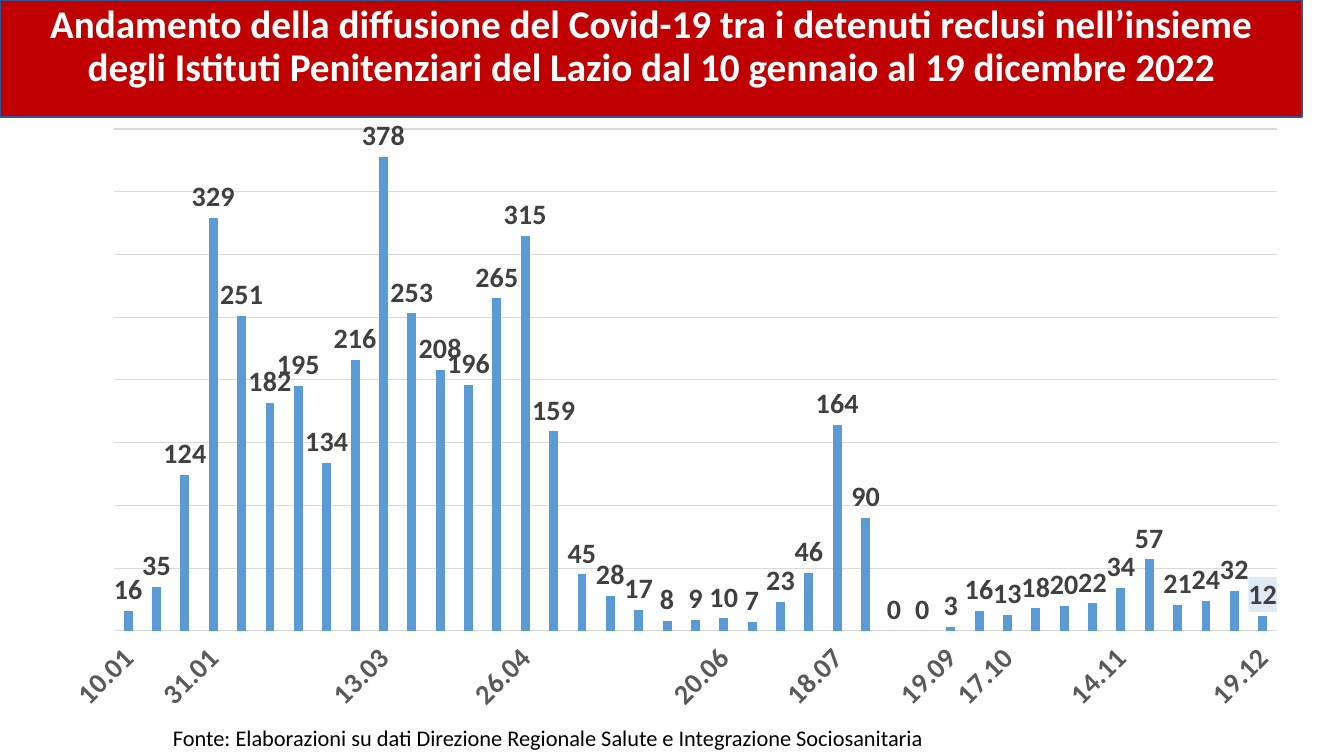
from lxml import etree
from pptx import Presentation
from pptx.chart.data import CategoryChartData
from pptx.dml.color import RGBColor
from pptx.enum.chart import XL_CHART_TYPE, XL_LABEL_POSITION, XL_TICK_LABEL_POSITION, XL_TICK_MARK
from pptx.enum.text import MSO_ANCHOR, MSO_AUTO_SIZE, PP_ALIGN
from pptx.oxml import parse_xml
from pptx.oxml.ns import nsdecls, qn
from pptx.util import Pt

COLUMN = XL_CHART_TYPE.COLUMN_CLUSTERED
OUTSIDE = XL_LABEL_POSITION.OUTSIDE_END
LOW = XL_TICK_LABEL_POSITION.LOW
NO_TICK = XL_TICK_MARK.NONE
TOP = MSO_ANCHOR.TOP
NO_FIT = MSO_AUTO_SIZE.NONE
GROW = MSO_AUTO_SIZE.SHAPE_TO_FIT_TEXT
CENTER = PP_ALIGN.CENTER

SCALE = 914400 / 100.8
COLORS = {
    "red": "C00000", "edge": "325491", "white": "FFFFFF", "black": "000000",
    "bar": "5B9BD5", "grid": "D9D9D9", "axis": "595959", "label": "404040",
    "tint": "DEEBF7",
}
DATES = {
    0: "10.01", 3: "31.01", 9: "13.03", 14: "26.04", 21: "20.06",
    25: "18.07", 29: "19.09", 31: "17.10", 35: "14.11", 40: "19.12",
}
CASES = [
    16, 35, 124, 329, 251, 182, 195, 134, 216, 378, 253, 208, 196, 265,
    315, 159, 45, 28, 17, 8, 9, 10, 7, 23, 46, 164, 90, 0, 0, 3, 16, 13,
    18, 20, 22, 34, 57, 21, 24, 32, 12,
]


def px(*nums):
    return [round(n * SCALE) for n in nums]


def style(font, size, color, bold):
    form = {"name": "Calibri", "size": Pt(size), "bold": bold}
    for key, value in form.items():
        setattr(font, key, value)
    font.color.rgb = RGBColor.from_string(COLORS[color])


deck = Presentation()
deck.slide_width, deck.slide_height = px(1344, 756)
slide = deck.slides.add_slide(deck.slide_layouts[5])

title = slide.shapes.title
title.left, title.top, title.width, title.height = px(0, 0, 1302, 117)
title.fill.solid()
title.fill.fore_color.rgb = RGBColor.from_string(COLORS["red"])
title.line.color.rgb = RGBColor.from_string(COLORS["edge"])
title.line.width = Pt(1)
frame = title.text_frame
frame.text = (
    "Andamento della diffusione del Covid-19 tra i detenuti reclusi "
    "nell’insieme degli Istituti Penitenziari del Lazio "
    "dal 10 gennaio al 19 dicembre 2022"
)
for key, value in {"vertical_anchor": TOP, "auto_size": NO_FIT, "word_wrap": True}.items():
    setattr(frame, key, value)
para = frame.paragraphs[0]
for key, value in {"alignment": CENTER, "line_spacing": 0.9, "space_before": Pt(10)}.items():
    setattr(para, key, value)
style(para.runs[0].font, 28, "white", True)

data = CategoryChartData()
data.categories = [DATES.get(i, "") for i in range(len(CASES))]
data.add_series("Series 1", CASES)
chart = slide.shapes.add_chart(COLUMN, *px(45, 118, 1257, 601), data).chart
chart.has_legend = False
chart.has_title = False
style(chart.font, 20, "black", True)

dates = chart.category_axis
dates.major_tick_mark = NO_TICK
dates.minor_tick_mark = NO_TICK
dates.tick_label_position = LOW
style(dates.tick_labels.font, 20, "axis", True)
scale = chart.value_axis
for key, value in {
    "visible": False, "has_major_gridlines": True,
    "minimum_scale": 0, "maximum_scale": 400, "major_unit": 50,
}.items():
    setattr(scale, key, value)
for line in (dates.format.line, scale.major_gridlines.format.line):
    line.color.rgb = RGBColor.from_string(COLORS["grid"])
    line.width = Pt(0.75)

node = dates._element
turn = node.find(qn("c:txPr")).find(qn("a:bodyPr"))
turn.set("rot", "-2700000")
turn.set("vert", "horz")
skip = etree.Element(qn("c:tickLblSkip"), val="1")
node.find(qn("c:noMultiLvlLbl")).addprevious(skip)

plot = chart.plots[0]
for key, value in {"gap_width": 219, "overlap": -27, "vary_by_categories": False}.items():
    setattr(plot, key, value)
bars = plot.series[0]
bars.format.fill.solid()
bars.format.fill.fore_color.rgb = RGBColor.from_string(COLORS["bar"])
labels = bars.data_labels
labels.show_value = True
labels.position = OUTSIDE
style(labels.font, 20, "label", True)

last = bars.points[len(CASES) - 1].data_label
style(last.font, 20, "label", True)
last.position = OUTSIDE
tint = parse_xml(
    f'<c:spPr {nsdecls("c", "a")}><a:solidFill>'
    f'<a:srgbClr val="{COLORS["tint"]}"/></a:solidFill></c:spPr>'
)
mark = labels._element.find(qn("c:dLbl"))
mark.find(qn("c:txPr")).addprevious(tint)

area = chart._chartSpace.chart.plotArea
old = area.find(qn("c:layout"))
if old is not None:
    area.remove(old)
layout = etree.Element(qn("c:layout"))
manual = etree.SubElement(layout, qn("c:manualLayout"))
for tag, value in {
    "layoutTarget": "inner", "xMode": "edge", "yMode": "edge",
    "x": 69 / 1257, "y": 11 / 601, "w": 1163 / 1257, "h": 502 / 601,
}.items():
    etree.SubElement(manual, qn(f"c:{tag}"), val=str(value))
area.insert(0, layout)

note = slide.shapes.add_textbox(*px(163, 719, 790, 37)).text_frame
note.text = "Fonte: Elaborazioni su dati Direzione Regionale Salute e Integrazione Sociosanitaria"
note.word_wrap = False
note.auto_size = GROW
style(note.paragraphs[0].runs[0].font, 16, "black", False)

deck.save("out.pptx")
